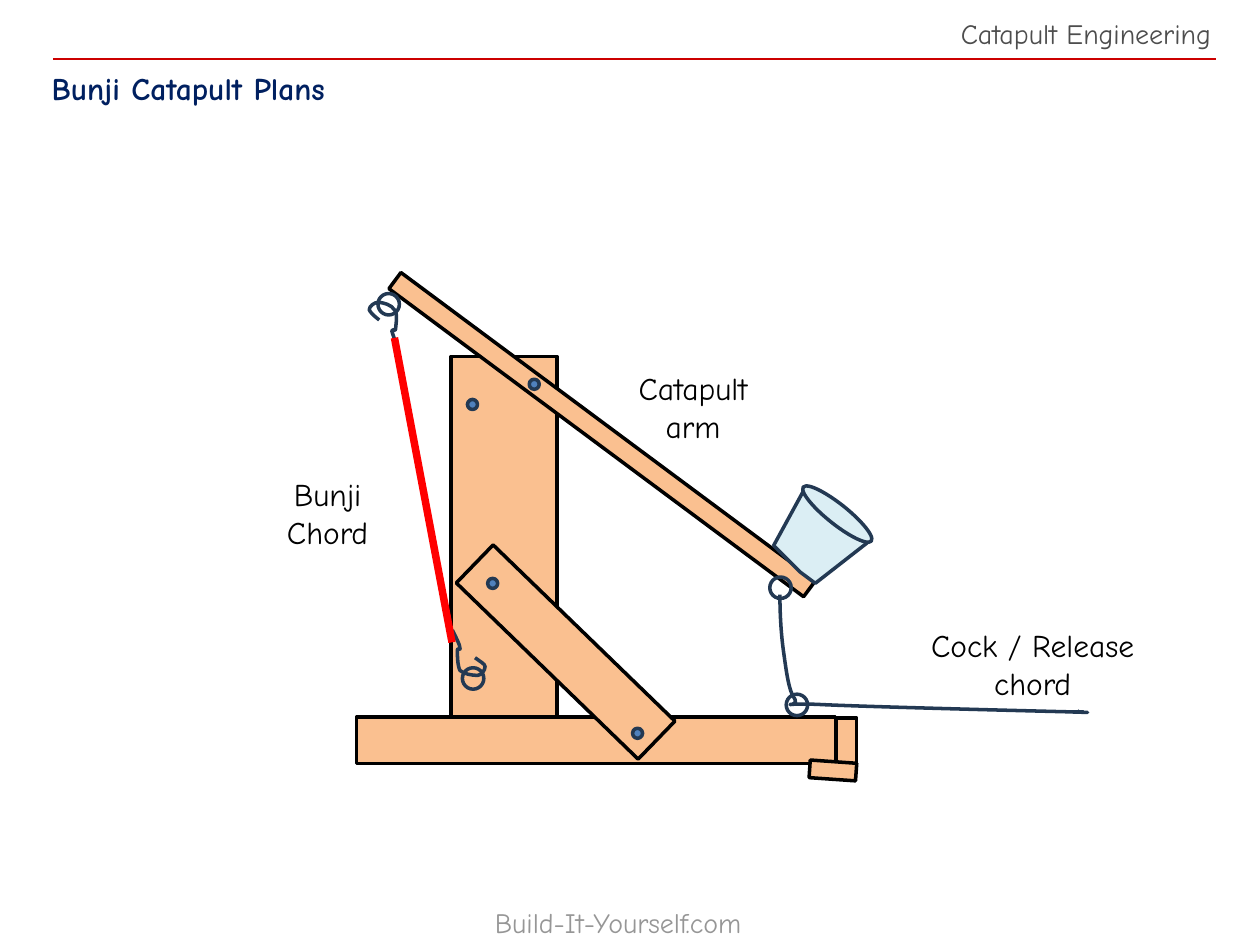
from math import cos, radians, sin

from lxml import etree
from pptx import Presentation
from pptx.dml.color import RGBColor
from pptx.enum.shapes import MSO_CONNECTOR, MSO_SHAPE
from pptx.enum.text import MSO_ANCHOR, MSO_AUTO_SIZE, PP_ALIGN
from pptx.oxml.ns import qn
from pptx.util import Inches, Pt

RECT, OVAL = MSO_SHAPE.RECTANGLE, MSO_SHAPE.OVAL
LEFT, CENTER, RIGHT = PP_ALIGN.LEFT, PP_ALIGN.CENTER, PP_ALIGN.RIGHT
GROW, TOP = MSO_AUTO_SIZE.SHAPE_TO_FIT_TEXT, MSO_ANCHOR.TOP
FONT = "Comic Neue"
WOOD, BLACK, STEEL, NAVY, CUP, RED = "FAC090", "000000", "4F81BD", "233953", "DBEEF4", "FF0000"

# Content: text, box, alignment, size, colour, wrap
TITLE = "Bunji Catapult Plans"
HEADER_FOOTER = [
    ("Catapult Engineering", (7.36, 0.08, 2.35, 0.37), RIGHT, 16, "4D4D4D", False),
    ("Build-It-Yourself.com", (3.83, 7.14, 2.46, 0.37), LEFT, 16, "969696", False),
]
LABELS = [
    ("Catapult arm", (4.8, 2.88, 1.4, 0.71), CENTER, 18, BLACK, True),
    ("Bunji\nChord", (1.9, 3.72, 1.4, 0.71), CENTER, 18, BLACK, True),
    ("Cock / Release chord", (7.17, 4.92, 2.05, 0.71), CENTER, 18, BLACK, True),
]

# Wooden parts: box, rotation
BOARDS = [
    ((3.58, 2.83, 0.84, 3.23), 0),       # post
    ((2.83, 5.69, 3.8, 0.37), 0),        # base
    ((6.64, 5.7, 0.16, 0.37), 0),        # end block
    ((6.54, 5.93, 0.14, 0.37), 94),      # foot
    ((4.28, 4.17, 0.42, 2.01), 314.1),   # brace
    ((2.73, 3.37, 4.1, 0.16), 36.6),     # arm
]

# Top left corners of the round parts
BOLT, RING = 0.08, 0.17
ARM_BOLTS = [(4.2, 3.01), (3.71, 3.17)]
BRACE_BOLTS = [(3.87, 4.59), (5.02, 5.78)]
HOOK_RINGS = [(3, 2.33), (3.67, 5.3)]
CHORD_RINGS = [(6.11, 4.58), (6.24, 5.51)]

# Outlines on the slide: box, rotation, then the start point followed by
# line ends (x, y) or Bezier triples (x1, y1, x2, y2, x, y)
CUP_SIDE = ((6.14, 4.03, 0.65, 0.53), 38.5, [
    (6.38, 3.89), (6.14, 4.33), (6.35, 4.54), (6.47, 4.63), (6.88, 4.31), (6.88, 4.31),
])
TOP_HOOK = ((2.89, 2.45, 0.38, 0.24), 37.1, [
    (3.01, 2.54), (2.97, 2.51, 2.94, 2.48, 2.93, 2.46), (2.93, 2.43, 2.97, 2.4, 3, 2.4),
    (3.04, 2.4, 3.11, 2.42, 3.13, 2.46), (3.16, 2.49, 3.14, 2.58, 3.14, 2.61),
    (3.14, 2.64, 3.11, 2.6, 3.11, 2.63), (3.12, 2.66, 3.14, 2.72, 3.16, 2.78),
])
LOW_HOOK = ((3.5, 5.08, 0.38, 0.24), 210.8, [
    (3.77, 5.22), (3.81, 5.25, 3.85, 5.27, 3.85, 5.29), (3.85, 5.32, 3.82, 5.36, 3.79, 5.36),
    (3.75, 5.36, 3.68, 5.35, 3.65, 5.32), (3.63, 5.28, 3.63, 5.19, 3.63, 5.16),
    (3.63, 5.13, 3.66, 5.17, 3.65, 5.14), (3.65, 5.12, 3.62, 5.06, 3.59, 5),
])
RELEASE_CHORD = ((6.19, 4.72, 2.44, 0.94), 0, [
    (6.19, 4.72), (6.19, 4.88, 6.2, 5.04, 6.22, 5.18), (6.24, 5.32, 6.26, 5.49, 6.31, 5.55),
    (6.35, 5.62, 6.11, 5.58, 6.48, 5.59), (6.84, 5.61, 8.49, 5.65, 8.49, 5.65),
    (8.82, 5.66, 8.48, 5.65, 8.48, 5.65), (8.6, 5.65), (8.56, 5.65),
    (8.56, 5.65, 8.57, 5.65, 8.57, 5.64),
])


def rgb(color):
    return RGBColor.from_string(color)


def place(sp, box):
    sp.left, sp.top, sp.width, sp.height = map(Inches, box)


def style(sp, fill, line):
    sp.shadow.inherit = False
    if fill:
        sp.fill.solid()
        sp.fill.fore_color.rgb = rgb(fill)
    else:
        sp.fill.background()
    if line:
        sp.line.color.rgb = rgb(line)
        sp.line.width = Pt(2)
    else:
        sp.line.fill.background()


def add_part(kind, box, fill=None, line=NAVY, rotation=0):
    sp = s.shapes.add_shape(kind, *map(Inches, box))
    sp.rotation = rotation
    style(sp, fill, line)


def add_circles(corners, size, fill=None):
    for x, y in corners:
        add_part(OVAL, (x, y, size, size), fill)


def to_box(x, y, box, rotation):
    """Slide point turned back into the unrotated box, from its corner."""
    left, top, w, h = box
    dx, dy, a = x - left - w / 2, y - top - h / 2, radians(rotation)
    return (Inches(w / 2 + dx * cos(a) + dy * sin(a)),
            Inches(h / 2 - dx * sin(a) + dy * cos(a)))


def add_outline(outline, fill=None):
    box, rotation, steps = outline
    local = [[to_box(*step[i:i + 2], box, rotation) for i in range(0, len(step), 2)]
             for step in steps]
    builder = s.shapes.build_freeform(*local[0][0])
    builder.add_line_segments([pts[-1] for pts in local[1:]], close=False)
    sp = builder.convert_to_shape()
    place(sp, box)
    sp.rotation = rotation
    # Rewrite the segments in box coordinates, with curves where given
    path_el = next(sp._element.iter(qn("a:path")))
    path_el.set("w", str(sp.width))
    path_el.set("h", str(sp.height))
    for segment, pts in zip(list(path_el), local):
        if len(pts) == 3:
            segment.tag = qn("a:cubicBezTo")
        for pt in list(segment):
            segment.remove(pt)
        for x, y in pts:
            etree.SubElement(segment, qn("a:pt"), x=str(x), y=str(y))
    style(sp, fill, NAVY)


def set_text(tf, text, align, size, color, wrap=True, bold=False):
    tf.text = text
    tf.word_wrap = wrap
    tf.vertical_anchor = TOP
    for p in tf.paragraphs:
        p.alignment = align
        for r in p.runs:
            r.font.name, r.font.size, r.font.bold = FONT, Pt(size), bold
            r.font.color.rgb = rgb(color)


def add_texts(items):
    for text, box, *look in items:
        tf = s.shapes.add_textbox(*map(Inches, box)).text_frame
        set_text(tf, text, *look)
        tf.auto_size = GROW


prs = Presentation()
prs.slide_width, prs.slide_height = Inches(10), Inches(7.5)
s = prs.slides.add_slide(prs.slide_layouts[5])

# Title, header rule, header and footer
place(s.shapes.title, (0.31, 0.5, 5.96, 0.28))
set_text(s.shapes.title.text_frame, TITLE, LEFT, 18, "002060", bold=True)
rule = s.shapes.add_connector(MSO_CONNECTOR.STRAIGHT, *map(Inches, (9.65, 0.47, 0.42, 0.47)))
rule.line.color.rgb = rgb("CC0000")
rule.line.width = Pt(1.5)
etree.SubElement(rule._element.spPr, qn("a:effectLst"))
add_texts(HEADER_FOOTER)

# Wooden frame and arm
for box, rotation in BOARDS:
    add_part(RECT, box, WOOD, BLACK, rotation)
add_circles(ARM_BOLTS, BOLT, STEEL)

# Cup
add_outline(CUP_SIDE, CUP)
add_part(OVAL, (6.3, 4, 0.69, 0.16), CUP, rotation=38.5)

# Bunji chord with its hooks
add_circles(HOOK_RINGS, RING)
add_outline(TOP_HOOK)
add_outline(LOW_HOOK)
add_part(RECT, (3.33, 2.66, 0.06, 2.46), RED, None, 349.3)

# Release chord
add_circles(CHORD_RINGS, RING)
add_outline(RELEASE_CHORD)

add_circles(BRACE_BOLTS, BOLT, STEEL)
add_texts(LABELS)

prs.save("out.pptx")
